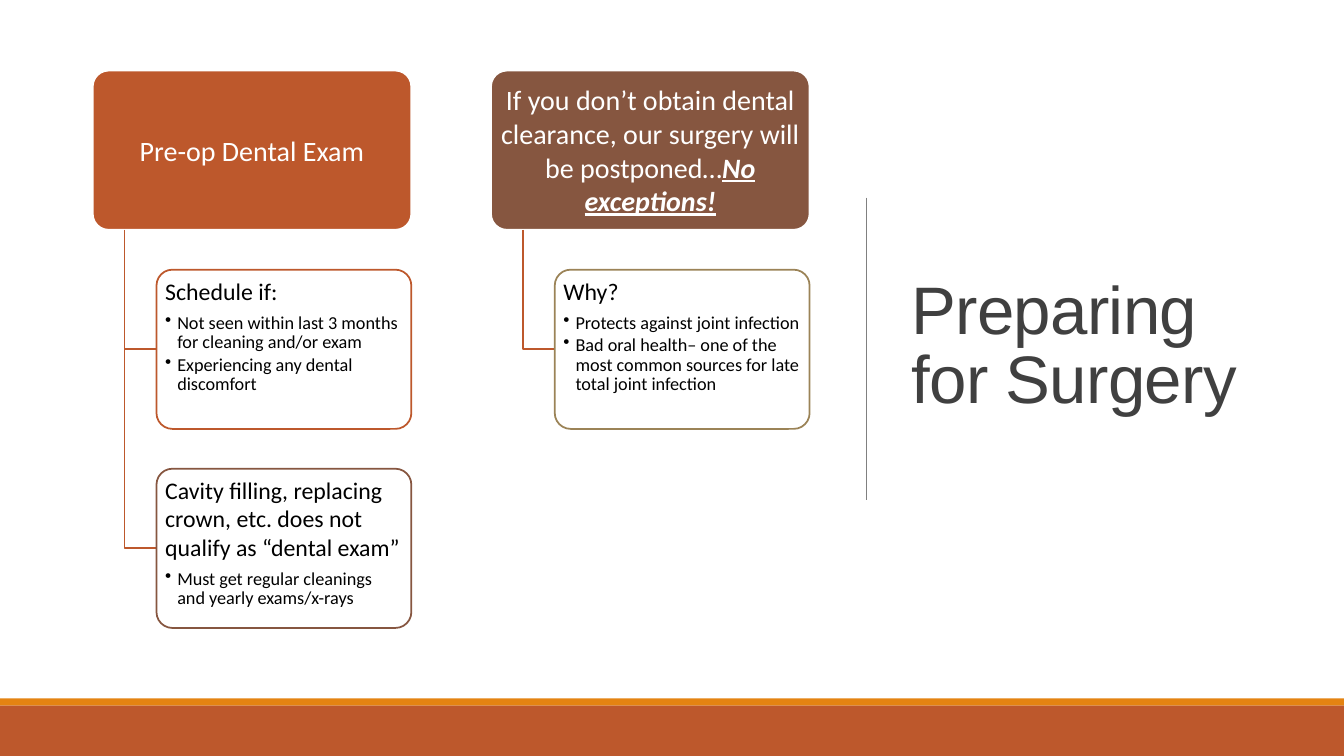
from lxml import etree
from pptx import Presentation
from pptx import util as u
from pptx.dml.color import RGBColor
from pptx.enum import shapes, text
from pptx.oxml.ns import qn

WHITE = RGBColor(0xFF, 0xFF, 0xFF)
BLACK = RGBColor(0x00, 0x00, 0x00)
CHARCOAL = RGBColor(0x40, 0x40, 0x40)
GRAY = RGBColor(0x80, 0x80, 0x80)
ORANGE = RGBColor(0xE4, 0x83, 0x12)
RUST = RGBColor(0xBD, 0x58, 0x2C)
BROWN = RGBColor(0x86, 0x56, 0x40)
TAN = RGBColor(0x9B, 0x83, 0x57)

# Inches
SLIDE_WIDTH, SLIDE_HEIGHT = 13.33, 7.5
TREE_LEFT, TREE_TOP = 0.92, 0.7
CARD_HEIGHT = 1.58
HEADER_WIDTH = 2 * CARD_HEIGHT
COLUMN_STEP = 2.5 * CARD_HEIGHT
ROW_STEP = 1.25 * CARD_HEIGHT
CHILD_INDENT = 0.2 * HEADER_WIDTH
BULLET_INDENT = 0.12

# Header runs as (text, emphasised), header fill, children as (outline, heading, bullets)
COLUMNS = [
    ([("Pre-op Dental Exam", False)], RUST, [
        (RUST, "Schedule if:",
         ["Not seen within last 3 months for cleaning and/or exam",
          "Experiencing any dental discomfort"]),
        (BROWN, "Cavity filling, replacing crown, etc. does not qualify as “dental exam”",
         ["Must get regular cleanings and yearly exams/x-rays"]),
    ]),
    ([("If you don’t obtain dental clearance, our surgery will be postponed…", False),
      ("No exceptions!", True)], BROWN, [
        (TAN, "Why?",
         ["Protects against joint infection",
          "Bad oral health– one of the most common sources for late total joint infection"]),
    ]),
]


def style_paragraph(paragraph, size, color, space_after):
    paragraph.space_after = u.Pt(space_after)
    paragraph.font.name = "Calibri"
    paragraph.font.size = u.Pt(size)
    paragraph.font.color.rgb = color


def add_bullet(paragraph):
    properties = paragraph._p.get_or_add_pPr()
    properties.set("marL", str(u.Inches(BULLET_INDENT)))
    properties.set("indent", str(-u.Inches(BULLET_INDENT)))
    etree.SubElement(properties, qn("a:buChar")).set("char", "•")


def add_card(slide, left, top, width, fill, outline, anchor, vertical_inset):
    card = slide.shapes.add_shape(
        shapes.MSO_SHAPE.ROUNDED_RECTANGLE,
        u.Inches(left), u.Inches(top), u.Inches(width), u.Inches(CARD_HEIGHT))
    card.adjustments[0] = 0.1
    card.shadow.inherit = False
    card.fill.solid()
    card.fill.fore_color.rgb = fill
    card.line.color.rgb = outline
    card.line.width = u.Pt(1.25)
    frame = card.text_frame
    frame.word_wrap = True
    frame.vertical_anchor = anchor
    frame.margin_left = frame.margin_right = u.Inches(0.04)
    frame.margin_top = frame.margin_bottom = u.Inches(vertical_inset)
    return frame


def add_header(slide, left, top, runs, fill):
    frame = add_card(slide, left, top, HEADER_WIDTH, fill, WHITE,
                     text.MSO_ANCHOR.MIDDLE, 0.03)
    paragraph = frame.paragraphs[0]
    paragraph.alignment = text.PP_ALIGN.CENTER
    style_paragraph(paragraph, 20, WHITE, 7)
    for words, emphasised in runs:
        run = paragraph.add_run()
        run.text = words
        if emphasised:
            run.font.bold = run.font.italic = run.font.underline = True


def add_child(slide, left, top, outline, heading, bullets):
    frame = add_card(slide, left, top, HEADER_WIDTH - CHILD_INDENT, WHITE, outline,
                     text.MSO_ANCHOR.TOP, 0.02)
    paragraph = frame.paragraphs[0]
    paragraph.text = heading
    paragraph.alignment = text.PP_ALIGN.LEFT
    style_paragraph(paragraph, 17, BLACK, 6)
    for bullet in bullets:
        paragraph = frame.add_paragraph()
        paragraph.text = bullet
        paragraph.level = 1
        paragraph.alignment = text.PP_ALIGN.LEFT
        paragraph.line_spacing = 0.9
        add_bullet(paragraph)
        style_paragraph(paragraph, 13, BLACK, 2)


def add_branch(slide, left, top, right, bottom):
    """Draw the elbow from a header's lower edge to a child's left side."""
    builder = slide.shapes.build_freeform(u.Inches(left), u.Inches(top))
    builder.add_line_segments(
        [(u.Inches(left), u.Inches(bottom)), (u.Inches(right), u.Inches(bottom))],
        close=False)
    branch = builder.convert_to_shape()
    branch.shadow.inherit = False
    branch.fill.background()
    branch.line.color.rgb = RUST
    branch.line.width = u.Pt(1.25)


def add_column(slide, left, top, runs, fill, children):
    add_header(slide, left, top, runs, fill)
    child_left = left + CHILD_INDENT
    for row, child in enumerate(children, start=1):
        child_top = top + row * ROW_STEP
        add_branch(slide, left + CHILD_INDENT / 2, top + CARD_HEIGHT,
                   child_left, child_top + CARD_HEIGHT / 2)
        add_child(slide, child_left, child_top, *child)


def add_title(slide, left, top, width, height):
    title = slide.shapes.title
    title.left, title.top = u.Inches(left), u.Inches(top)
    title.width, title.height = u.Inches(width), u.Inches(height)
    frame = title.text_frame
    frame.word_wrap = True
    frame.auto_size = text.MSO_AUTO_SIZE.NONE
    frame.vertical_anchor = text.MSO_ANCHOR.MIDDLE
    paragraph = frame.paragraphs[0]
    run = paragraph.add_run()
    run.text = "Preparing for Surgery"
    run._r.get_or_add_rPr().set("spc", "-50")
    paragraph.alignment = text.PP_ALIGN.LEFT
    paragraph.line_spacing = 0.85
    paragraph.font.name = "Arial"
    paragraph.font.size = u.Pt(48)
    paragraph.font.color.rgb = CHARCOAL


def add_divider(slide, left, top, height):
    divider = slide.shapes.add_connector(
        shapes.MSO_CONNECTOR.STRAIGHT,
        u.Inches(left), u.Inches(top), u.Inches(left), u.Inches(top + height))
    divider.line.color.rgb = GRAY
    divider.line.width = u.Pt(0.5)
    etree.SubElement(divider._element.spPr, qn("a:effectLst"))


def add_band(slide, top, height, color):
    band = slide.shapes.add_shape(
        shapes.MSO_SHAPE.RECTANGLE,
        0, u.Inches(top), u.Inches(SLIDE_WIDTH), u.Inches(height))
    band.shadow.inherit = False
    band.fill.solid()
    band.fill.fore_color.rgb = color
    band.line.fill.background()


def main():
    presentation = Presentation()
    presentation.slide_width = u.Inches(SLIDE_WIDTH)
    presentation.slide_height = u.Inches(SLIDE_HEIGHT)
    slide = presentation.slides.add_slide(presentation.slide_layouts[5])
    add_title(slide, 8.94, 0.69, 3.69, 5.53)
    add_divider(slide, 8.59, 1.96, 3)
    add_band(slide, 6.93, 0.07, ORANGE)
    add_band(slide, 7, 0.5, RUST)
    for index, column in enumerate(COLUMNS):
        add_column(slide, TREE_LEFT + index * COLUMN_STEP, TREE_TOP, *column)
    presentation.save("out.pptx")


if __name__ == "__main__":
    main()
